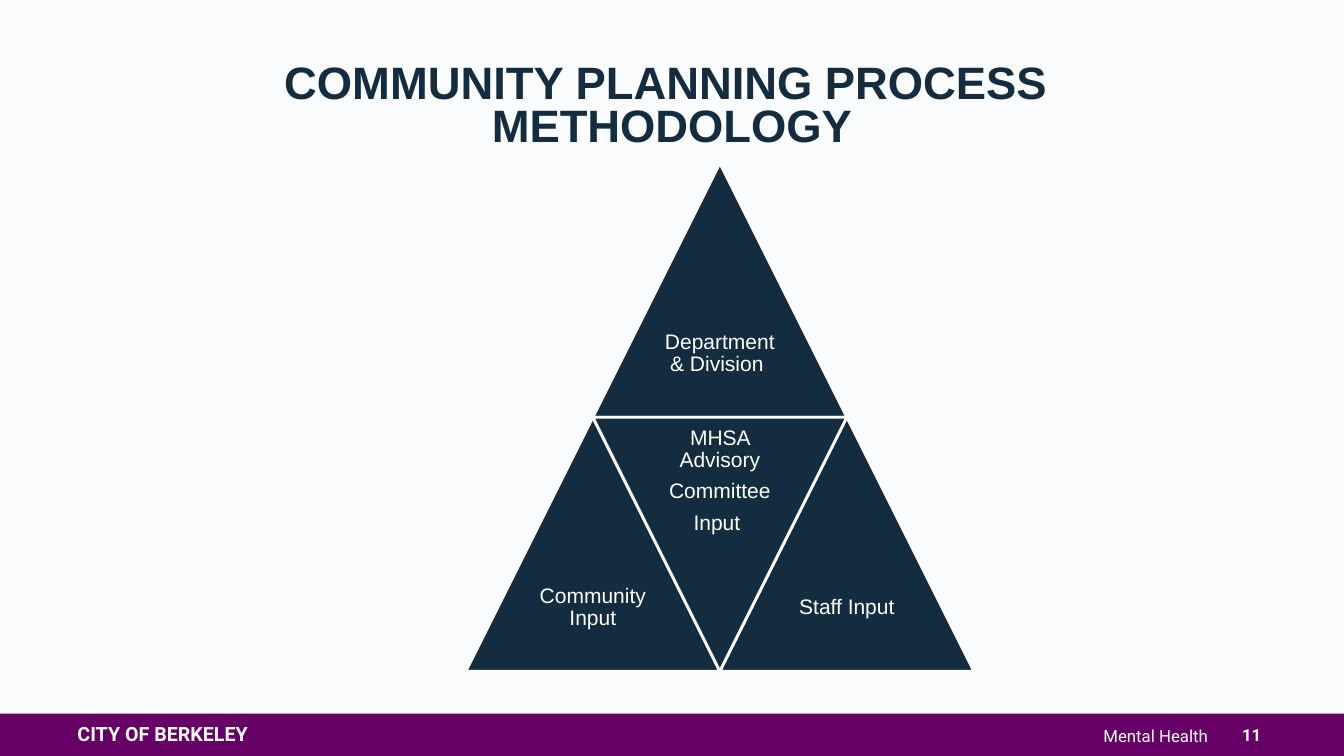
from pptx import Presentation
from pptx.dml.color import RGBColor
from pptx.enum.shapes import MSO_SHAPE as SHAPE
from pptx.enum.text import MSO_ANCHOR as ANCHOR, MSO_AUTO_SIZE as AUTO, PP_ALIGN as ALIGN
from pptx.util import Inches, Pt

NAVY = RGBColor(0x14, 0x2C, 0x3F)
PURPLE = RGBColor(0x66, 0x00, 0x66)
WHITE = RGBColor(0xFF, 0xFF, 0xFF)
PALE = RGBColor(0xFB, 0xFC, 0xFD)


def add_shape(kind, x, y, w, h, color):
    sp = s.shapes.add_shape(kind, Inches(x), Inches(y), Inches(w), Inches(h))
    sp.shadow.inherit = False
    sp.fill.solid()
    sp.fill.fore_color.rgb = color
    return sp


def write(tf, lines, font, size, color, align, bold=False, spacing=0.9, after=0):
    tf.word_wrap = True
    tf.text = "\n".join(lines)
    for p in tf.paragraphs:
        p.alignment = align
        p.line_spacing = spacing
        p.space_before, p.space_after = Pt(0), Pt(after)
        p.font.name, p.font.size, p.font.bold = font, Pt(size), bold
        p.font.color.rgb = color


prs = Presentation()
prs.slide_width, prs.slide_height = Inches(13.33), Inches(7.5)
s = prs.slides.add_slide(prs.slide_layouts[5])
s.background.fill.solid()
s.background.fill.fore_color.rgb = PALE

# Title
title = s.shapes.title
title.left, title.top = Inches(0.84), Inches(0.59)
title.width, title.height = Inches(11.65), Inches(1.03)
tf = title.text_frame
tf.auto_size = AUTO.NONE
tf.vertical_anchor = ANCHOR.TOP
write(tf, ["COMMUNITY PLANNING PROCESS ", "METHODOLOGY"], "Arial", 32.4, NAVY,
      ALIGN.CENTER, bold=True, spacing=0.8)

# Footer bar and its texts
bar = add_shape(SHAPE.RECTANGLE, 0, 7.08, 13.33, 0.42, PURPLE)
bar.line.fill.background()
footer = [
    ("CITY OF BERKELEY", 0.67, 6.95, 2.5, 0.68, 14, True, ALIGN.LEFT, 0.9),
    ("Mental Health", 5.83, 6.97, 6.25, 0.68, 12, False, ALIGN.RIGHT, 0.9),
    ("11", 12.08, 7.08, 0.67, 0.42, 12, True, ALIGN.CENTER, 1.0),
]
for text, x, y, w, h, size, bold, align, spacing in footer:
    tf = s.shapes.add_textbox(Inches(x), Inches(y), Inches(w), Inches(h)).text_frame
    tf.vertical_anchor = ANCHOR.MIDDLE
    write(tf, [text], "Roboto", size, WHITE, align, bold, spacing)

# Pyramid: column in half-sides, row in sides, whether it points down
SIDE = 2.52
HALF = SIDE / 2
LEFT, TOP = 4.62, 1.62
pyramid = [
    (["Department & Division "], 1, 0, False),
    (["Community Input"], 0, 1, False),
    (["MHSA Advisory", "Committee", "Input "], 1, 1, True),
    (["Staff Input"], 2, 1, False),
]
for lines, col, row, down in pyramid:
    x, y = LEFT + col * HALF, TOP + row * SIDE
    tri = add_shape(SHAPE.ISOSCELES_TRIANGLE, x, y, SIDE, SIDE, NAVY)
    tri.line.color.rgb = WHITE
    tri.line.width = Pt(2)
    tri.rotation = 180 if down else 0

    # The label sits in the wide half of its triangle
    label_y = y if down else y + HALF
    box = s.shapes.add_textbox(Inches(x + HALF / 2), Inches(label_y), Inches(HALF), Inches(HALF))
    tf = box.text_frame
    tf.margin_left = tf.margin_right = tf.margin_top = tf.margin_bottom = Inches(0.06)
    tf.vertical_anchor = ANCHOR.MIDDLE
    write(tf, lines, "Arial", 15, WHITE, ALIGN.CENTER, after=6)

prs.save("out.pptx")
